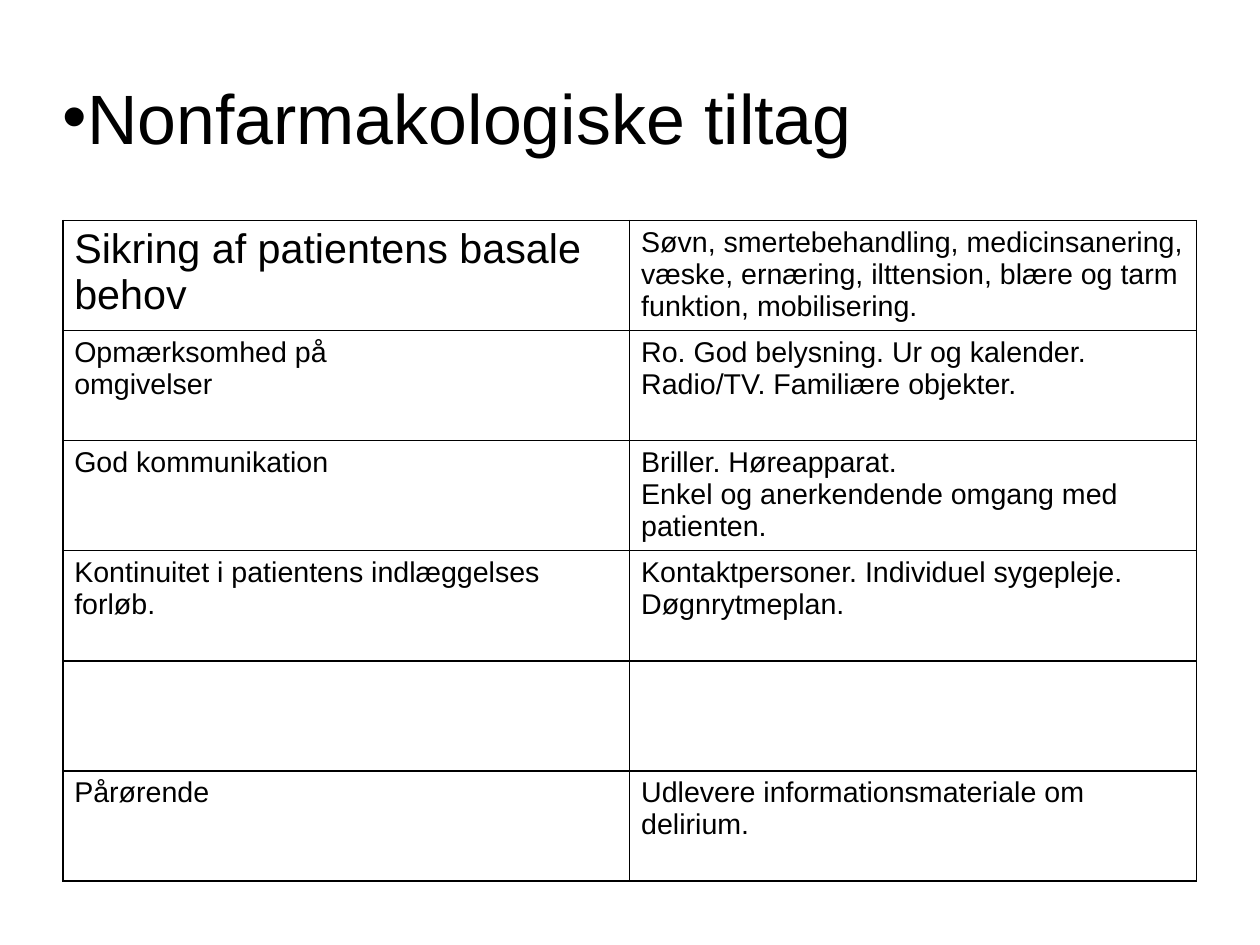
from pptx import Presentation
from pptx.dml.color import RGBColor as RGB
from pptx.enum.text import MSO_ANCHOR as Anchor, PP_ALIGN as Align
from pptx.oxml.ns import qn
from pptx.util import Inches, Pt
from lxml.etree import SubElement as Sub

TITLE = "Nonfarmakologiske tiltag"
ROWS = [
    (["Sikring af patientens basale", "behov"],
     ["Søvn, smertebehandling, medicinsanering, væske, ernæring, ilttension, blære og tarm funktion, mobilisering."]),
    (["Opmærksomhed på", "omgivelser"],
     ["Ro. God belysning. Ur og kalender. Radio/TV. Familiære objekter."]),
    (["God kommunikation"],
     ["Briller. Høreapparat.", "Enkel og anerkendende omgang med patienten."]),
    (["Kontinuitet i patientens indlæggelses forløb."],
     ["Kontaktpersoner. Individuel sygepleje.", "Døgnrytmeplan."]),
    ([], []),
    (["Pårørende"], ["Udlevere informationsmateriale om delirium."]),
]
INCH = 2.54
LEFT, WIDTH = 0.55, 9.92
TOP, HIGH = 1.93, 5.78
INK, PAPER = "000000", "FFFFFF"
FRAME = {"word_wrap": True, "vertical_anchor": Anchor.MIDDLE,
         "margin_left": 0, "margin_right": 0, "margin_top": 0, "margin_bottom": 0}
CELL = {"margin_left": Inches(0.1), "margin_right": Inches(0.1),
        "margin_top": Inches(0.05), "margin_bottom": Inches(0.01)}


def color(code):
    return RGB.from_string(code)


def style(item, values):
    for name, value in values.items():
        setattr(item, name, value)


def write(frame, lines, size):
    for i, line in enumerate(lines):
        para = frame.paragraphs[0] if i == 0 else frame.add_paragraph()
        para.alignment = Align.LEFT
        run = para.add_run()
        run.text = line
        style(run.font, {"name": "Arial", "size": Pt(size), "bold": False})
        run.font.color.rgb = color(INK)


def border(cell):
    props = cell._tc.get_or_add_tcPr()
    for side in ("a:lnL", "a:lnR", "a:lnT", "a:lnB"):
        line = Sub(props, qn(side), w=str(Pt(1)))
        fill = Sub(line, qn("a:solidFill"))
        Sub(fill, qn("a:srgbClr"), val=INK)


deck = Presentation()
deck.slide_width = Inches(28 / INCH)
deck.slide_height = Inches(21 / INCH)
slide = deck.slides.add_slide(deck.slide_layouts[6])

box = slide.shapes.add_textbox(*map(Inches, (LEFT, 0.33, WIDTH, 1.38)))
head = box.text_frame
style(head, FRAME)
write(head, [TITLE], 44)
props = head.paragraphs[0]._p.get_or_add_pPr()
props.set("marL", "0")
props.set("indent", "0")
Sub(props, qn("a:buFont"), typeface="Arial")
Sub(props, qn("a:buChar"), char="•")

table = slide.shapes.add_table(len(ROWS), 2, *map(Inches, (LEFT, TOP, WIDTH, HIGH))).table
style(table, {"first_row": False, "horz_banding": False})
for r, row in enumerate(ROWS):
    for c, lines in enumerate(row):
        cell = table.cell(r, c)
        style(cell, CELL)
        border(cell)
        cell.fill.solid()
        cell.fill.fore_color.rgb = color(PAPER)
        write(cell.text_frame, lines, 26 if r == c == 0 else 18)

deck.save("out.pptx")
